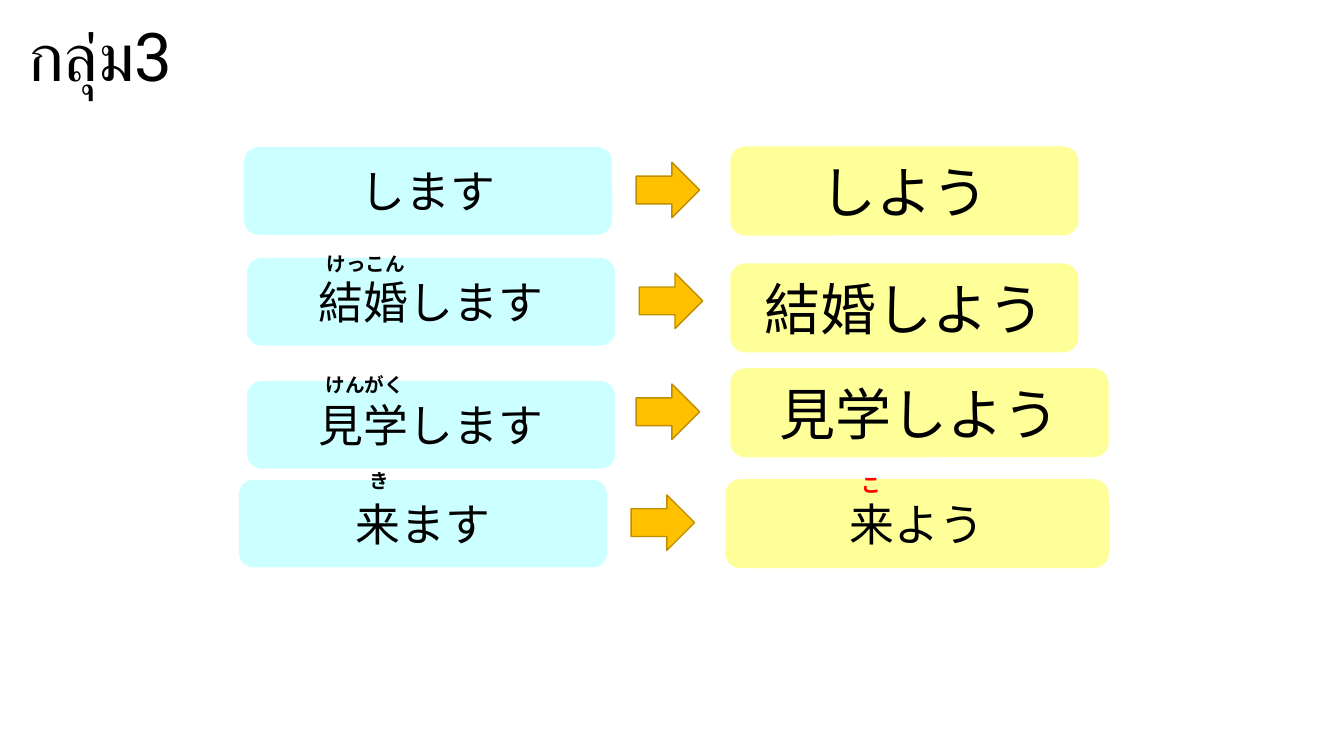
from dataclasses import dataclass
from typing import Optional

from pptx import Presentation
from pptx.dml.color import RGBColor
from pptx.enum.shapes import MSO_SHAPE
from pptx.enum.text import MSO_ANCHOR, MSO_AUTO_SIZE, PP_ALIGN
from pptx.util import Inches, Pt

CYAN, YELLOW = "CCFFFF", "FFFF99"
ORANGE, BROWN = "FFC000", "BD8E00"
BLACK, RED = "000000", "FF0000"

BOX_H = 0.87
ARROW_W, ARROW_H = 0.63, 0.55
READING_W, READING_H = 1.73, 0.34


@dataclass
class Card:
    text: str
    left: float
    top: float
    width: float
    size: int
    fill: str
    line: Optional[str] = None


@dataclass
class Verb:
    polite: Card
    arrow_left: float
    volitional: Card


@dataclass
class Reading:
    text: str
    left: float
    top: float
    color: str = BLACK


def polite(text: str, left: float, top: float) -> Card:
    return Card(text, left, top, 3.65, 32, CYAN)


def volitional(text: str, left: float, top: float, width: float, size: int = 40) -> Card:
    return Card(text, left, top, width, size, YELLOW, YELLOW)


VERBS = [
    Verb(polite("します", 2.42, 1.46), 6.31, volitional("しよう", 7.25, 1.46, 3.44)),
    Verb(polite("結婚します", 2.45, 2.56), 6.34, volitional("結婚しよう", 7.25, 2.62, 3.44)),
    Verb(polite("見学します", 2.45, 3.78), 6.31, volitional("見学しよう", 7.25, 3.66, 3.74)),
    Verb(polite("来ます", 2.37, 4.76), 6.26, volitional("来よう", 7.2, 4.76, 3.79, 32)),
]
ARROW_TOP, ARROW_STEP = 1.61, 1.1

READINGS = [
    Reading("けっこん", 3.14, 2.45),
    Reading("けんがく", 3.13, 3.65),
    Reading("き", 3.57, 4.6),
    Reading("こ", 8.45, 4.64, RED),
]


def rgb(value: str) -> RGBColor:
    return RGBColor.from_string(value)


def write(sp, text: str, align: PP_ALIGN, color: str, frame: dict, font: dict) -> None:
    tf = sp.text_frame
    for name, value in frame.items():
        setattr(tf, name, value)
    p = tf.paragraphs[0]
    p.alignment = align
    r = p.add_run()
    r.text = text
    for name, value in font.items():
        setattr(r.font, name, value)
    r.font.color.rgb = rgb(color)


def add_block(slide, kind: MSO_SHAPE, left: float, top: float, width: float,
              height: float, fill: str, line: Optional[str]):
    sp = slide.shapes.add_shape(kind, Inches(left), Inches(top), Inches(width), Inches(height))
    sp.shadow.inherit = False
    sp.fill.solid()
    sp.fill.fore_color.rgb = rgb(fill)
    if line:
        sp.line.color.rgb = rgb(line)
        sp.line.width = Pt(1)
    else:
        sp.line.fill.background()
    return sp


def add_card(slide, card: Card) -> None:
    sp = add_block(slide, MSO_SHAPE.ROUNDED_RECTANGLE, card.left, card.top,
                   card.width, BOX_H, card.fill, card.line)
    write(sp, card.text, PP_ALIGN.CENTER, BLACK,
          {"word_wrap": True, "vertical_anchor": MSO_ANCHOR.MIDDLE},
          {"name": "Lato", "size": Pt(card.size)})


def add_reading(slide, reading: Reading) -> None:
    """Small kana set above the kanji of a card."""
    sp = slide.shapes.add_textbox(Inches(reading.left), Inches(reading.top),
                                  Inches(READING_W), Inches(READING_H))
    write(sp, reading.text, PP_ALIGN.LEFT, reading.color,
          {"word_wrap": True, "auto_size": MSO_AUTO_SIZE.SHAPE_TO_FIT_TEXT},
          {"name": "Arial", "size": Pt(14), "bold": True})


def set_title(slide, text: str) -> None:
    sp = slide.shapes.title
    place = {"left": 0.18, "top": 0.09, "width": 3.29, "height": 0.91}
    for name, value in place.items():
        setattr(sp, name, Inches(value))
    write(sp, text, PP_ALIGN.LEFT, BLACK,
          {"word_wrap": True, "vertical_anchor": MSO_ANCHOR.TOP,
           "auto_size": MSO_AUTO_SIZE.SHAPE_TO_FIT_TEXT},
          {"name": "Roboto", "size": Pt(48)})


def main() -> None:
    prs = Presentation()
    prs.slide_width, prs.slide_height = Inches(13.33), Inches(7.5)
    slide = prs.slides.add_slide(prs.slide_layouts.get_by_name("Title Only"))

    set_title(slide, "กลุ่ม3")
    for row, verb in enumerate(VERBS):
        add_card(slide, verb.polite)
        add_block(slide, MSO_SHAPE.RIGHT_ARROW, verb.arrow_left,
                  ARROW_TOP + row * ARROW_STEP, ARROW_W, ARROW_H, ORANGE, BROWN)
        add_card(slide, verb.volitional)
    for reading in READINGS:
        add_reading(slide, reading)

    prs.save("out.pptx")


if __name__ == "__main__":
    main()
